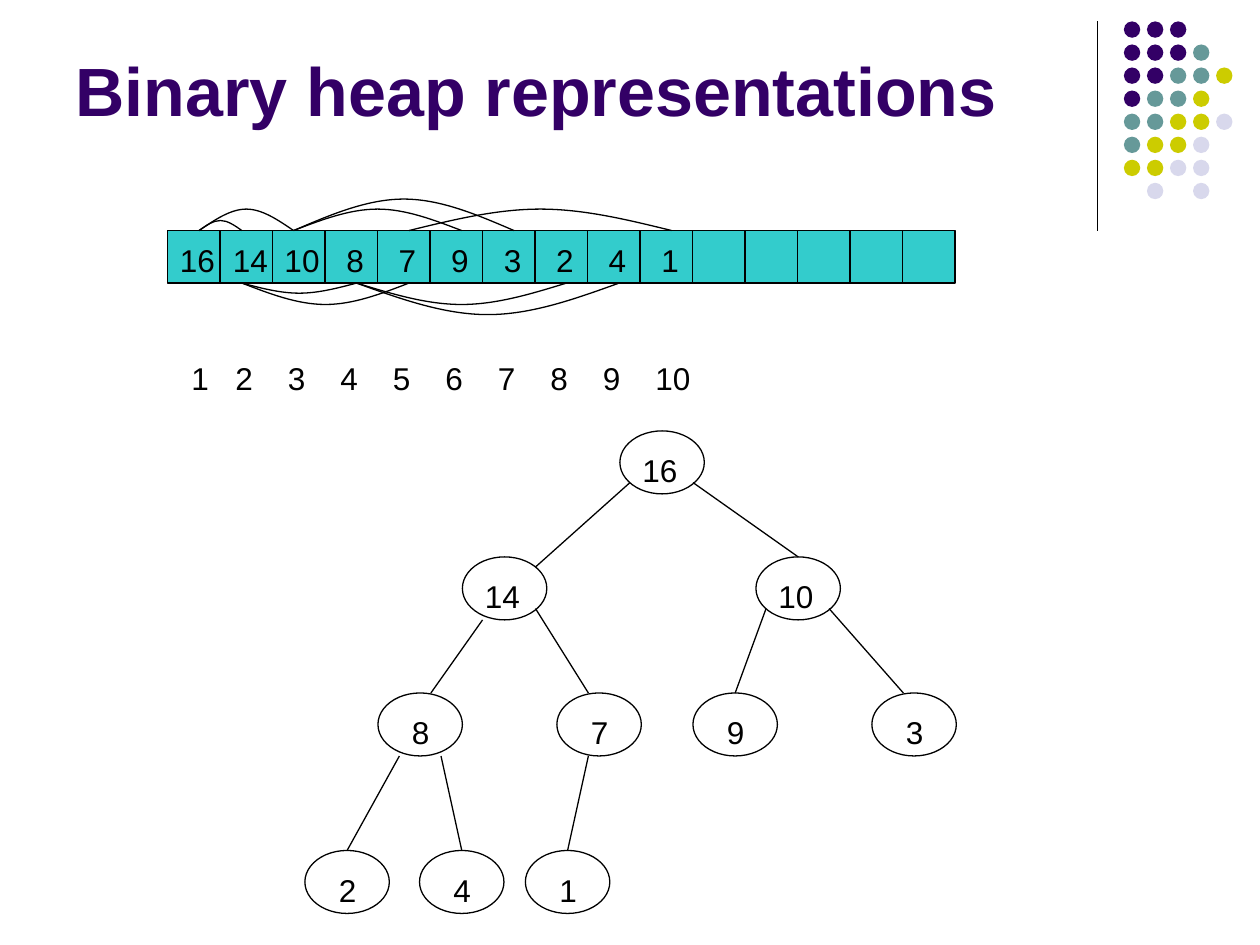
from dataclasses import dataclass
from typing import NamedTuple, Optional

from lxml.etree import SubElement
from pptx import Presentation
from pptx.dml.color import RGBColor
from pptx.enum.shapes import MSO_CONNECTOR, MSO_SHAPE
from pptx.enum.text import MSO_ANCHOR
from pptx.oxml.ns import qn
from pptx.shapes.autoshape import Shape
from pptx.shapes.connector import Connector
from pptx.slide import Slide
from pptx.util import Inches, Pt


@dataclass(frozen=True)
class Theme:
    """Colours, font and sizes of the slide."""
    font: str = "Arial"
    title_size: int = 39
    body_size: int = 18
    line_width: float = 0.75
    ink: str = "000000"
    purple: str = "330066"
    teal: str = "669999"
    yellow: str = "CCCC00"
    lilac: str = "D8D8EC"
    cell: str = "33CCCC"


class Point(NamedTuple):
    """A place on the slide, in inches."""
    x: float
    y: float


class Node(NamedTuple):
    """A tree node and the top left corner of its ellipse."""
    value: str
    x: float
    y: float


class Edge(NamedTuple):
    """A tree edge; without an end it joins the top of its child."""
    child: str
    start: Point
    end: Optional[Point] = None


class Arc(NamedTuple):
    """A parent to child arc; a negative height bends it upwards."""
    parent: int
    child: int
    height: float


THEME = Theme()
STEP = 5 / 12
ARRAY_LEFT, ARRAY_TOP, CELL_COUNT = 1.33, 1.83, 15
NODE_WIDTH, NODE_HEIGHT = 0.67, 0.5
DOT_SIZE, DOT_STEP = 0.13, 0.183
DOT_ROWS = ["PPP", "PPPT", "PPTTY", "PTTY", "TTYYL", "TYYL", "YYLL", " L L"]
DOT_COLOURS = {"P": THEME.purple, "T": THEME.teal, "Y": THEME.yellow, "L": THEME.lilac}
HEAP = ["16", "14", "10", "8", "7", "9", "3", "2", "4", "1"]
VALUE_TABS = [0.42, 0.83] + [1.32 + STEP * i for i in range(7)]
INDEX_TABS = [0.35 + STEP * i for i in range(9)]
ARC_STARTS = [1.58, 1.92, 2.33] + [2.83 + STEP * i for i in range(7)]
ARC_PROFILE = [0, 0.5, 1, 1, 1, 0.5, 0]
ARCS = [
    Arc(1, 2, -0.08), Arc(1, 3, -0.17), Arc(2, 4, 0.08),
    Arc(2, 5, 0.17), Arc(3, 6, -0.17), Arc(3, 7, -0.25),
    Arc(4, 8, 0.17), Arc(4, 9, 0.25), Arc(5, 10, -0.17),
]
NODES = [
    Node("16", 4.92, 3.42),
    Node("14", 3.67, 4.42), Node("10", 6, 4.42),
    Node("8", 3, 5.5), Node("7", 4.42, 5.5), Node("9", 5.5, 5.5), Node("3", 6.92, 5.5),
    Node("2", 2.42, 6.75), Node("4", 3.33, 6.75), Node("1", 4.17, 6.75),
]
EDGES = [
    Edge("14", Point(5, 3.83), Point(4.25, 4.5)),
    Edge("10", Point(5.5, 3.83)),
    Edge("8", Point(3.83, 4.92), Point(3.42, 5.5)),
    Edge("7", Point(4.25, 4.83), Point(4.67, 5.5)),
    Edge("9", Point(6.08, 4.83)),
    Edge("3", Point(6.58, 4.83), Point(7.17, 5.5)),
    Edge("2", Point(3.17, 6)),
    Edge("4", Point(3.5, 6)),
    Edge("1", Point(4.67, 6)),
]


def add_line(page: Slide, start: Point, end: Point) -> Connector:
    """Draw a thin straight line."""
    line = page.shapes.add_connector(
        MSO_CONNECTOR.STRAIGHT, *(Inches(value) for value in (*start, *end)))
    line.line.color.rgb = RGBColor.from_string(THEME.ink)
    line.line.width = Pt(THEME.line_width)
    SubElement(line.element.spPr, qn("a:effectLst"))
    return line


def style_shape(shape: Shape, fill: Optional[str], outlined: bool) -> None:
    """Set the fill and outline of a shape and drop its shadow."""
    shape.shadow.inherit = False
    if fill:
        shape.fill.solid()
        shape.fill.fore_color.rgb = RGBColor.from_string(fill)
    else:
        shape.fill.background()
    if outlined:
        shape.line.color.rgb = RGBColor.from_string(THEME.ink)
        shape.line.width = Pt(THEME.line_width)
    else:
        shape.line.fill.background()


def add_figure(page: Slide, kind: MSO_SHAPE, place: Point, width: float, height: float,
               fill: Optional[str] = None, outlined: bool = True) -> Shape:
    """Draw a preset shape."""
    figure = page.shapes.add_shape(
        kind, *(Inches(value) for value in (*place, width, height)))
    style_shape(figure, fill, outlined)
    return figure


def add_text(page: Slide, text: str, place: Point, width: float, height: float = 0.4,
             size: int = THEME.body_size, colour: str = THEME.ink,
             bold: bool = False) -> Shape:
    """Write one paragraph in a text box."""
    box = page.shapes.add_textbox(
        *(Inches(value) for value in (*place, width, height)))
    frame = box.text_frame
    frame.word_wrap = True
    frame.margin_top = Inches(0.08)
    span = frame.paragraphs[0].add_run()
    span.text = text
    span.font.name = THEME.font
    span.font.size = Pt(size)
    span.font.bold = bold
    span.font.color.rgb = RGBColor.from_string(colour)
    return box


def add_tabbed_row(page: Slide, words: list[str], place: Point, tabs: list[float]) -> None:
    """Write words in one paragraph, spaced by tab stops."""
    box = add_text(page, "\t".join(words), place, 6.17)
    properties = box.text_frame.paragraphs[0].runs[0].font._element.getparent().getparent().get_or_add_pPr()
    stops = SubElement(properties, qn("a:tabLst"))
    for tab in tabs:
        SubElement(stops, qn("a:tab"), pos=str(int(Inches(tab))), algn="l")


def add_arc(page: Slide, arc: Arc) -> None:
    """Draw two joined curves from a parent cell to a child cell."""
    left, right = ARC_STARTS[arc.parent - 1], ARC_STARTS[arc.child - 1]
    base = ARRAY_TOP if arc.height < 0 else ARRAY_TOP + STEP
    points = [(Inches(left + (right - left) * i / 6), Inches(base + arc.height * share))
              for i, share in enumerate(ARC_PROFILE)]
    builder = page.shapes.build_freeform(*points[0])
    builder.add_line_segments(points[1:], close=False)
    curve = builder.convert_to_shape()
    style_shape(curve, None, True)
    segments = list(curve.element.iter(qn("a:lnTo")))
    for first in range(0, len(segments), 3):
        bezier = SubElement(segments[first].getparent(), qn("a:cubicBezTo"))
        for segment in segments[first:first + 3]:
            bezier.append(segment[0])
            segment.getparent().remove(segment)


def add_dots(page: Slide) -> None:
    """Draw the corner ornament of coloured dots."""
    add_line(page, Point(8.71, 0.17), Point(8.71, 1.83))
    for row, pattern in enumerate(DOT_ROWS):
        for column, key in enumerate(pattern):
            if key in DOT_COLOURS:
                place = Point(8.92 + DOT_STEP * column, 0.17 + DOT_STEP * row)
                add_figure(page, MSO_SHAPE.OVAL, place, DOT_SIZE, DOT_SIZE,
                           DOT_COLOURS[key], False)


def add_array(page: Slide) -> None:
    """Draw the heap as an array with indices and arcs."""
    corner = Point(ARRAY_LEFT, ARRAY_TOP)
    add_figure(page, MSO_SHAPE.RECTANGLE, corner, STEP * CELL_COUNT, STEP, THEME.cell)
    for cell in range(1, CELL_COUNT):
        x = ARRAY_LEFT + STEP * cell
        add_line(page, Point(x, ARRAY_TOP), Point(x, ARRAY_TOP + STEP))
    add_tabbed_row(page, HEAP, corner, VALUE_TABS)
    indices = [str(index) for index in range(1, len(HEAP) + 1)]
    add_tabbed_row(page, indices, Point(1.42, 2.77), INDEX_TABS)
    for arc in ARCS:
        add_arc(page, arc)


def add_tree(page: Slide) -> None:
    """Draw the heap as a binary tree."""
    ellipses: dict[str, Shape] = {}
    for node in NODES:
        ellipses[node.value] = add_figure(
            page, MSO_SHAPE.OVAL, Point(node.x, node.y), NODE_WIDTH, NODE_HEIGHT)
        indent = 0.08 if len(node.value) == 2 else 0.17
        add_text(page, node.value, Point(node.x + indent, node.y + 0.08), 0.58)
    for edge in EDGES:
        line = add_line(page, edge.start, edge.end or edge.start)
        if edge.end is None:
            line.end_connect(ellipses[edge.child], 0)


def main() -> None:
    """Build and save the slide."""
    deck = Presentation()
    deck.slide_width, deck.slide_height = Inches(10), Inches(7.5)
    page = deck.slides.add_slide(deck.slide_layouts[6])
    add_dots(page)
    title = add_text(page, "Binary heap representations", Point(0.5, 0.13), 8.25, 0.95,
                     THEME.title_size, THEME.purple, True)
    title.text_frame.vertical_anchor = MSO_ANCHOR.BOTTOM
    add_array(page)
    add_tree(page)
    deck.save("out.pptx")


if __name__ == "__main__":
    main()
